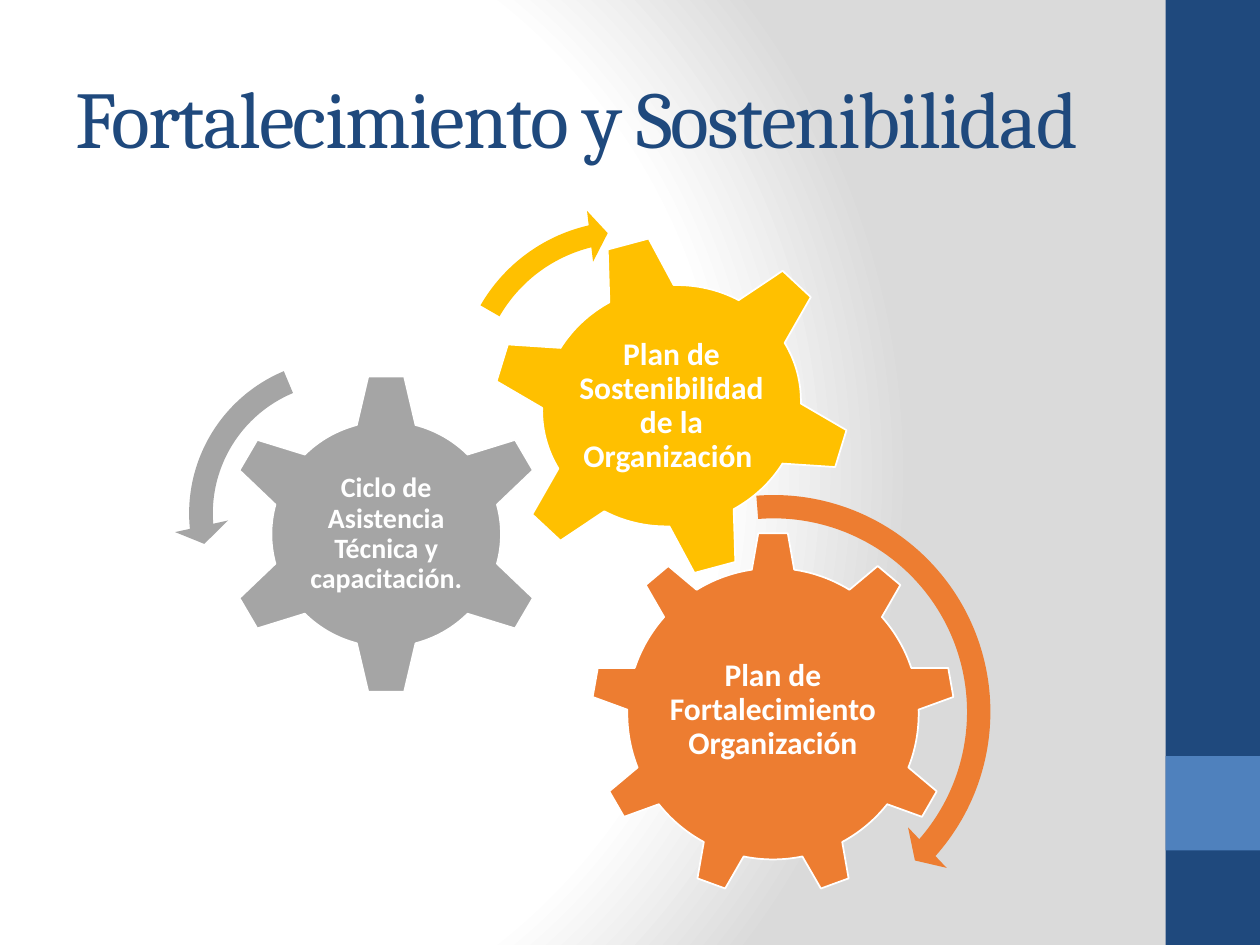
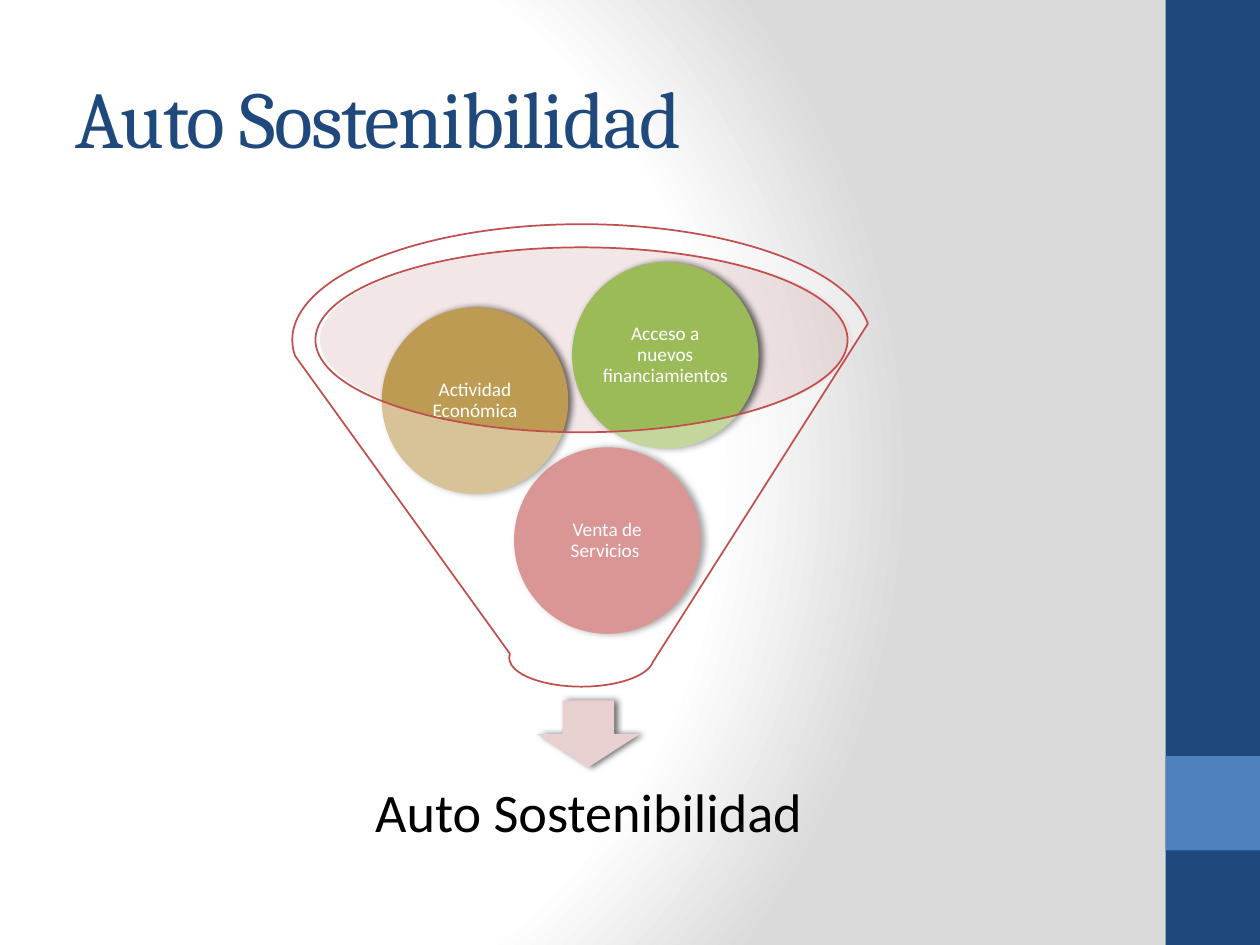
from dataclasses import dataclass

from lxml import etree
from pptx import Presentation
from pptx.dml.color import RGBColor
from pptx.enum.shapes import MSO_SHAPE
from pptx.enum.text import MSO_ANCHOR, MSO_AUTO_SIZE, PP_ALIGN
from pptx.oxml.ns import qn
from pptx.util import Inches, Pt

RECTANGLE, ELLIPSE = MSO_SHAPE.RECTANGLE, MSO_SHAPE.OVAL
GEAR_6, GEAR_9 = MSO_SHAPE.GEAR_6, MSO_SHAPE.GEAR_9
ARC_RIGHT, ARC_LEFT = MSO_SHAPE.CIRCULAR_ARROW, MSO_SHAPE.LEFT_CIRCULAR_ARROW
DOWN_ARROW, FUNNEL = MSO_SHAPE.DOWN_ARROW, MSO_SHAPE.FUNNEL
MIDDLE, NO_FIT = MSO_ANCHOR.MIDDLE, MSO_AUTO_SIZE.NONE
LEFT, CENTER = PP_ALIGN.LEFT, PP_ALIGN.CENTER
TITLE_ONLY = 5
COLUMNS, ROWS = 100, 75


@dataclass(frozen=True)
class Theme:
    """Colours, fonts and type sizes of the deck."""
    white: str = "FFFFFF"
    black: str = "000000"
    shade: str = "DADADA"
    navy: str = "1F497D"
    blue: str = "4F81BD"
    orange: str = "ED7D31"
    gray: str = "A5A5A5"
    yellow: str = "FFC000"
    red: str = "C0504D"
    gold: str = "BD9B53"
    green: str = "9BBB59"
    rose: str = "E2C2C2"
    blush: str = "E8D0D0"
    heading_font: str = "Cambria"
    body_font: str = "Calibri"
    title_size: int = 46
    caption_size: int = 31
    gear_size: int = 18
    small_gear_size: int = 16
    ball_size: int = 11


class Builder:
    """Holds the theme and the current page and draws on a 100 by 75 grid."""

    def __init__(self, theme):
        self.theme = theme
        self.deck = Presentation()
        self.deck.slide_width, self.deck.slide_height = Inches(10), Inches(7.5)
        self.column = self.deck.slide_width / COLUMNS
        self.row = self.deck.slide_height / ROWS
        self.page = None
        self.shade_master()

    def place(self, left, top, width, height):
        return (round(left * self.column), round(top * self.row),
                round(width * self.column), round(height * self.row))

    def shade_master(self):
        master = self.deck.slide_master
        master.background.fill.gradient()
        gradient = next(master.element.iter(qn("a:gradFill")))
        for child in list(gradient):
            gradient.remove(child)
        stops = etree.SubElement(gradient, qn("a:gsLst"))
        for share, color in ((0, self.theme.white), (75, self.theme.white), (100, self.theme.shade)):
            stop = etree.SubElement(stops, qn("a:gs"), pos=str(share * 1000))
            etree.SubElement(stop, qn("a:srgbClr"), val=color)
        circle = etree.SubElement(gradient, qn("a:path"), {"path": "circle"})
        etree.SubElement(circle, qn("a:fillToRect"), l="20000", t="50000", r="100000", b="50000")

    def add_master_bands(self):
        bands = (((92.5, 0, 7.5, ROWS), self.theme.navy),
                 ((92.5, 60, 7.5, 7.5), self.theme.blue))
        tree = self.deck.slide_master.shapes.element
        for number, (area, color) in enumerate(bands, 20):
            band = self.shape(RECTANGLE, area, color)
            band.element.nvSpPr.cNvPr.set("id", str(number))
            tree.append(band.element)

    def add_page(self, text, width):
        self.page = self.deck.slides.add_slide(self.deck.slide_layouts[TITLE_ONLY])
        if len(self.deck.slides) == 1:
            self.add_master_bands()
        title = self.page.shapes.title
        title.left, title.top, title.width, title.height = self.place(5, 3, width, 12.5)
        para = self.set_text(title.text_frame, text, self.theme.title_size,
                             self.theme.navy, self.theme.heading_font, LEFT)
        para.runs[0].font._element.set("spc", "-100")

    def set_text(self, frame, text, size, color, font, align):
        frame.word_wrap, frame.auto_size = True, NO_FIT
        frame.vertical_anchor = MIDDLE
        para = frame.paragraphs[0]
        para.text, para.alignment = text, align
        para.font.name, para.font.size = font, Pt(size)
        para.font.color.rgb = RGBColor.from_string(color)
        return para

    def label(self, text, area, size, color, bold=False, inset=0.02):
        box = self.page.shapes.add_textbox(*self.place(*area))
        frame = box.text_frame
        frame.margin_left = frame.margin_right = Inches(inset)
        frame.margin_top = frame.margin_bottom = Inches(inset)
        para = self.set_text(frame, text, size, color, self.theme.body_font, CENTER)
        para.line_spacing, para.font.bold = 0.9, bold

    def shape(self, kind, area, color, line=None, opacity=100, turn=0, adjust=()):
        item = self.page.shapes.add_shape(kind, *self.place(*area))
        item.shadow.inherit = False
        item.fill.solid()
        item.fill.fore_color.rgb = RGBColor.from_string(color)
        if opacity < 100:
            tint = next(item.element.spPr.iter(qn("a:srgbClr")))
            etree.SubElement(tint, qn("a:alpha"), val=str(opacity * 1000))
        if line:
            item.line.color.rgb = RGBColor.from_string(line)
            item.line.width = Pt(1)
        else:
            item.line.fill.background()
        item.rotation = turn
        for index, value in enumerate(adjust):
            item.adjustments[index] = value
        return item

    def cast_shadow(self, item):
        effects = item.element.spPr.find(qn("a:effectLst"))
        shadow = etree.SubElement(effects, qn("a:outerShdw"), blurRad=str(Pt(4)),
                                  dist=str(Pt(2)), dir="0", rotWithShape="0")
        color = etree.SubElement(shadow, qn("a:srgbClr"), val=self.theme.black)
        etree.SubElement(color, qn("a:alpha"), val="60000")

    def gear(self, kind, area, color, text, text_area, size, turn=0):
        self.shape(kind, area, color, line=self.theme.white, turn=turn)
        self.label(text, text_area, size, self.theme.white, bold=True)

    def ball(self, left, top, color, text):
        diameter, margin = 14.8, 2.15
        self.cast_shadow(self.shape(ELLIPSE, (left, top, diameter, diameter), color))
        side = diameter - 2 * margin
        self.label(text, (left + margin, top + margin, side, side),
                   self.theme.ball_size, self.theme.white)


def build_gears(builder):
    theme = builder.theme
    builder.add_page("Fortalecimiento y Sostenibilidad", 86.7)
    builder.gear(GEAR_9, (46.9, 42.2, 28.9, 28.9), theme.orange,
                 "Plan de Fortalecimiento Organización",
                 (52.7, 49, 17.3, 14.8), theme.gear_size)
    builder.gear(GEAR_6, (17.7, 29.6, 25.9, 25.6), theme.gray,
                 "Ciclo de Asistencia Técnica y capacitación.",
                 (24.2, 36.1, 12.9, 12.6), theme.small_gear_size)
    builder.gear(GEAR_6, (38.9, 18.6, 28.8, 27.2), theme.yellow,
                 "Plan de Sostenibilidad de la Organización ",
                 (45.3, 24.5, 16, 15.5), theme.gear_size, turn=345)
    builder.shape(ARC_RIGHT, (42.9, 38, 37, 37), theme.orange,
                  adjust=(0.05, 2.99, 24.87, 159.26, 0.06))
    builder.shape(ARC_LEFT, (13.8, 27.3, 26.9, 26.9), theme.gray,
                  adjust=(0.07, 4.3, 104.89, 148.38, 0.08))
    builder.shape(ARC_RIGHT, (35.2, 16.4, 29, 29), theme.yellow, turn=34.8,
                  adjust=(0.06, 3.94, 133.14, 105.08, 0.07))


def build_funnel(builder):
    theme = builder.theme
    builder.add_page("Auto Sostenibilidad", 83.3)
    builder.shape(ELLIPSE, (25.4, 19.6, 42.3, 14.7), theme.rose, opacity=40)
    builder.cast_shadow(builder.shape(DOWN_ARROW, (42.6, 55.6, 8.2, 5.3), theme.blush))
    builder.label("Auto Sostenibilidad", (27, 59.8, 39.4, 9.8),
                  theme.caption_size, theme.black, inset=0.24)
    builder.ball(40.8, 35.5, theme.red, "Venta de Servicios ")
    builder.ball(30.3, 24.4, theme.gold, "Actividad Económica")
    builder.ball(45.4, 20.8, theme.green, "Acceso a nuevos financiamientos")
    builder.shape(FUNNEL, (23.2, 17.8, 45.9, 36.7), theme.white, line=theme.red, opacity=40)


def main():
    builder = Builder(Theme())
    build_gears(builder)
    build_funnel(builder)
    builder.deck.save("out.pptx")


if __name__ == "__main__":
    main()
